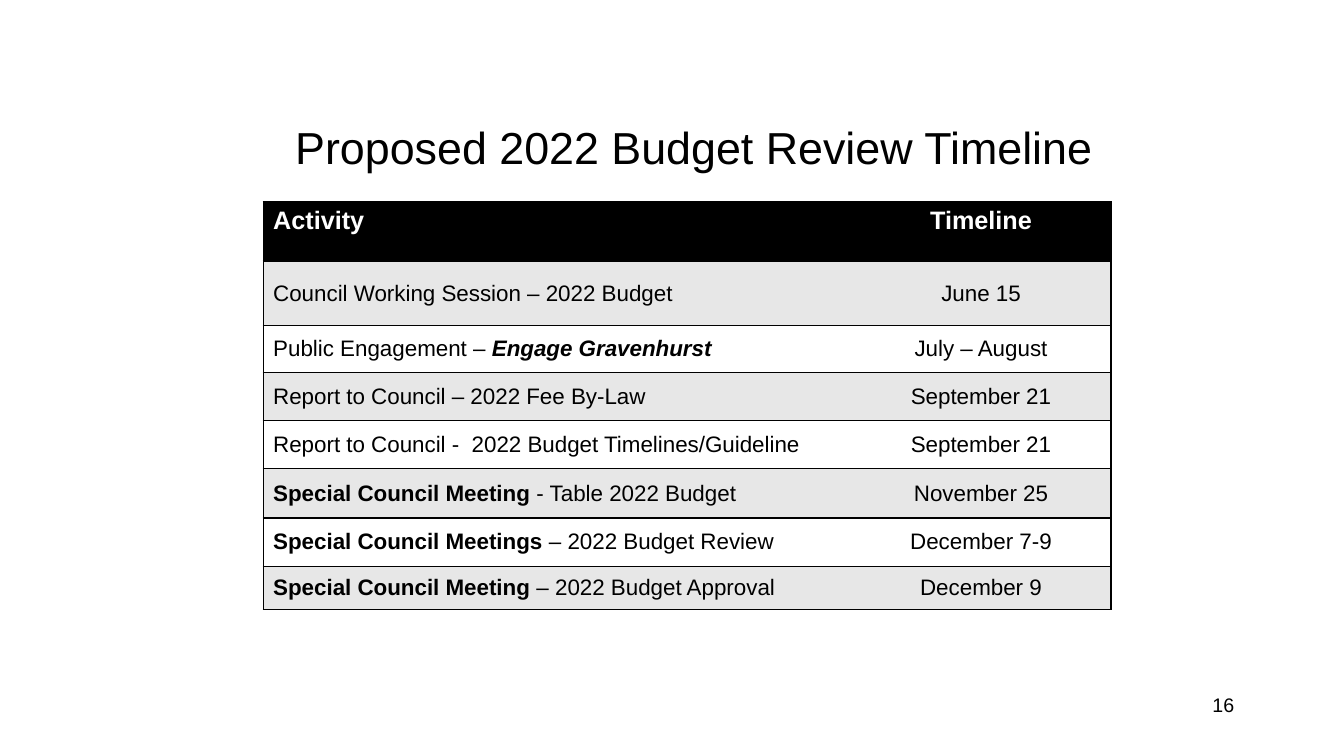
from lxml import etree
from pptx import Presentation
from pptx.dml.color import RGBColor
from pptx.enum.text import MSO_ANCHOR as Anchor, PP_ALIGN as Align
from pptx.oxml.ns import qn
from pptx.util import Inches, Pt

WIDTH, HEIGHT = 13.33, 7.5
FONT = "Arial"
COLORS = {"ink": "000000", "paper": "FFFFFF", "band": "E7E7E7"}
NO_STYLE = "{2D5ABB26-0587-4C30-8999-92F81FD0307C}"

BOLD = {"bold": True}
BOLD_ITALIC = {"bold": True, "italic": True}

# Each activity is a list of (text, font format) runs.
SCHEDULE = [
    ([("Council Working Session – 2022 Budget", {})], "June 15"),
    ([("Public Engagement – ", {}), ("Engage Gravenhurst", BOLD_ITALIC)], "July – August"),
    ([("Report to Council – 2022 Fee By-Law", {})], "September 21"),
    ([("Report to Council -  2022 Budget Timelines/Guideline", {})], "September 21"),
    ([("Special Council Meeting ", BOLD), ("- Table 2022 Budget", {})], "November 25"),
    ([("Special Council Meetings ", BOLD), ("– 2022 Budget Review", {})], "December 7-9"),
    ([("Special Council Meeting ", BOLD), ("– 2022 Budget Approval", {})], "December 9"),
]
COLUMN_WIDTHS = [5.83, 2.58]
ROW_HEIGHTS = [0.59, 0.64, 0.47, 0.47, 0.48, 0.49, 0.48, 0.43]


def rgb(name):
    return RGBColor.from_string(COLORS[name])


def write(paragraph, runs, size, color="ink", align=Align.LEFT):
    paragraph.alignment = align
    for text, changes in runs:
        run = paragraph.add_run()
        run.text = text
        font_format = {"name": FONT, "size": Pt(size), "bold": False, "italic": False}
        for attribute, value in {**font_format, **changes}.items():
            setattr(run.font, attribute, value)
        run.font.color.rgb = rgb(color)


def add_label(slide, box, text, size, align, inset_left=0.1):
    label = slide.shapes.add_textbox(*map(Inches, box)).text_frame
    label.word_wrap = True
    label.margin_left = Inches(inset_left)
    write(label.paragraphs[0], [(text, {})], size, align=align)


def add_borders(cell, sides):
    """Draw 1 pt lines on the given sides; must run before the cell is filled."""
    properties = cell._tc.get_or_add_tcPr()
    for side in "LRTB":
        line = etree.SubElement(properties, qn(f"a:ln{side}"), w=str(Pt(1)))
        if side in sides:
            fill = etree.SubElement(line, qn("a:solidFill"))
            etree.SubElement(fill, qn("a:srgbClr"), val=COLORS["ink"])
        else:
            etree.SubElement(line, qn("a:noFill"))


def add_schedule(slide, left, top):
    frame = slide.shapes.add_table(
        len(ROW_HEIGHTS), len(COLUMN_WIDTHS), Inches(left), Inches(top),
        Inches(sum(COLUMN_WIDTHS)), Inches(sum(ROW_HEIGHTS)))
    table = frame.table
    table._tbl.tblPr.find(qn("a:tableStyleId")).text = NO_STYLE
    table.horz_banding = False
    for column, width in zip(table.columns, COLUMN_WIDTHS):
        column.width = Inches(width)
    for row, height in zip(table.rows, ROW_HEIGHTS):
        row.height = Inches(height)

    header = ([("Activity", BOLD)], [("Timeline", BOLD)])
    entries = [(activity, [(date, {})]) for activity, date in SCHEDULE]
    for row, entry in enumerate([header, *entries]):
        is_header = row == 0
        background = "ink" if is_header else ("paper", "band")[row % 2]
        for column, runs in enumerate(entry):
            cell = table.cell(row, column)
            add_borders(cell, ("LTB", "RTB")[column])
            cell.fill.solid()
            cell.fill.fore_color.rgb = rgb(background)
            cell.vertical_anchor = Anchor.TOP if is_header else Anchor.MIDDLE
            write(cell.text_frame.paragraphs[0], runs,
                  size=18 if is_header else 16,
                  color="paper" if is_header else "ink",
                  align=(Align.LEFT, Align.CENTER)[column])


def build_timeline_slide(presentation):
    slide = presentation.slides.add_slide(presentation.slide_layouts[6])
    add_label(slide, (1.15, 1.14, 11.33, 0.8), "Proposed 2022 Budget Review Timeline",
              32, Align.CENTER, inset_left=0.24)
    add_schedule(slide, left=2.61, top=2)
    add_label(slide, (9.56, 6.83, 2.78, 0.5), "16", 14, Align.RIGHT)


def main():
    presentation = Presentation()
    presentation.slide_width = Inches(WIDTH)
    presentation.slide_height = Inches(HEIGHT)
    build_timeline_slide(presentation)
    presentation.save("out.pptx")


if __name__ == "__main__":
    main()
